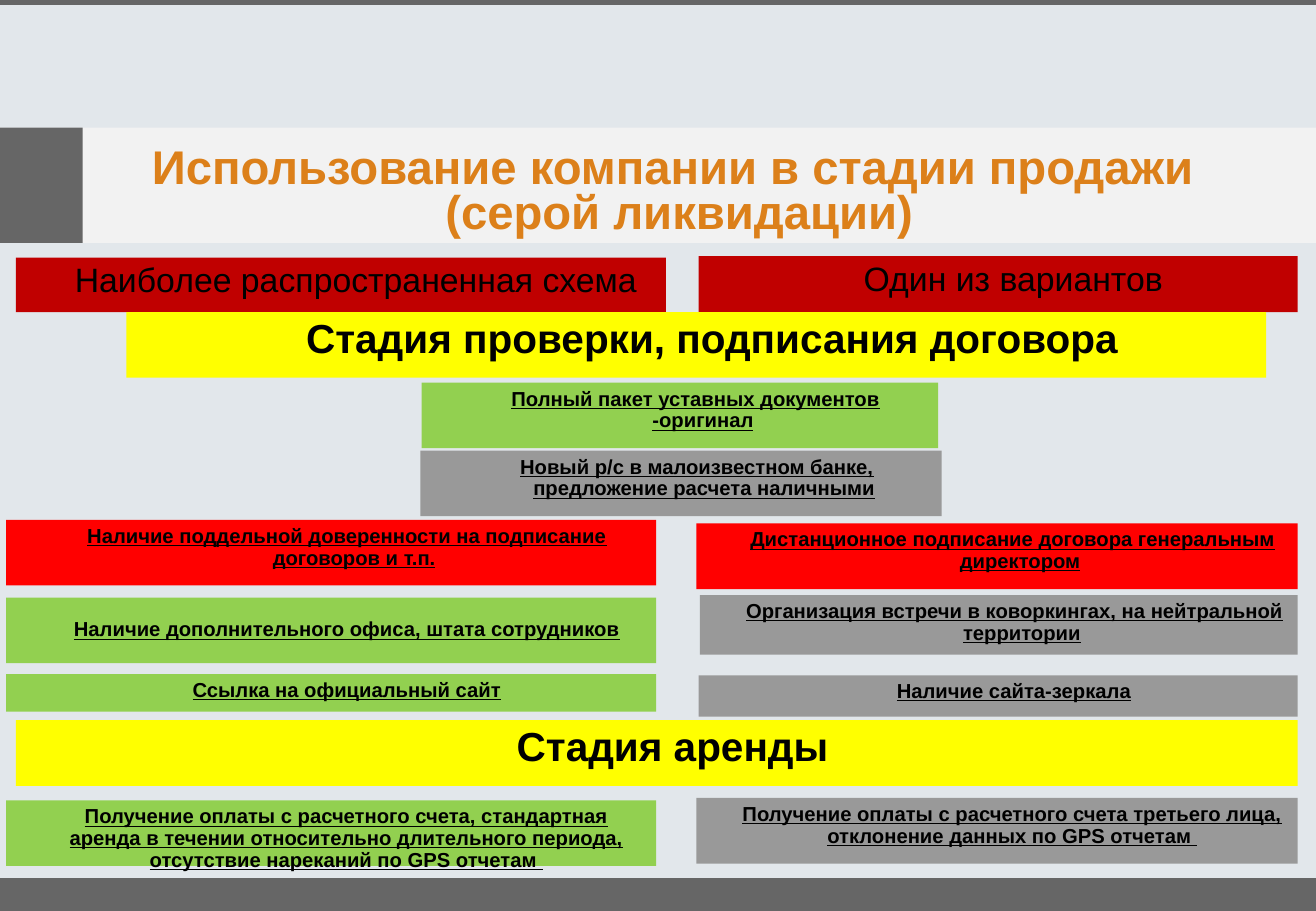
from copy import deepcopy
from dataclasses import dataclass

from pptx import Presentation
from pptx.dml.color import RGBColor
from pptx.enum.shapes import MSO_SHAPE as Preset
from pptx.enum.text import MSO_ANCHOR as Anchor, MSO_AUTO_SIZE as AutoSize, PP_ALIGN as Align
from pptx.oxml.ns import qn
from pptx.slide import Slide
from pptx.text.text import Font
from pptx.util import Inches, Pt

COLORS = {
    "background": "E2E7EB", "frame": "666666", "title band": "F2F2F2", "title": "DC801A",
    "scheme": "C00000", "stage": "FFFF00", "genuine": "92D050", "doubtful": "999999",
    "forged": "FF0000", "text": "000000",
}
SLIDE_WIDTH, SLIDE_HEIGHT = 10.83, 7.5
TEXT_SIZES = {"scheme": 20, "stage": 24}
SIGN_SIZE = 12
LEFT, LEFT_WIDTH = 0.05, 5.35
RIGHT, RIGHT_WIDTH = 5.73, 4.95
ROW = 0.54


@dataclass
class Band:
    """A plain strip of the slide frame."""
    role: str
    left: float
    top: float
    width: float
    height: float


@dataclass
class Card(Band):
    """A coloured strip with a heading or a sign of the scheme."""
    wording: str
    hanging: bool = True
    anchor: Anchor = Anchor.TOP


BANDS = [
    Band("frame", 0, 7.23, SLIDE_WIDTH, 0.27),
    Band("title band", 0, 1.05, SLIDE_WIDTH, 0.95),
    Band("frame", 0, 1.05, 0.68, 0.95),
    Band("frame", 0, 0, SLIDE_WIDTH, 0.04),
]
CARDS = [
    Card("scheme", 0.13, 2.12, LEFT_WIDTH, 0.45, "Наиболее распространенная схема", False),
    Card("scheme", 5.75, 2.11, 4.93, 0.46, "Один из вариантов", False),
    Card("stage", 1.04, 2.57, 9.38, ROW, "Стадия проверки, подписания договора"),
    Card("genuine", 3.47, 3.15, 4.25, ROW, "Полный пакет уставных документов -оригинал"),
    Card("doubtful", 3.46, 3.71, 4.29, ROW,
         "Новый р/с в малоизвестном банке, предложение расчета наличными"),
    Card("forged", LEFT, 4.28, LEFT_WIDTH, ROW,
         "Наличие поддельной доверенности на подписание договоров и т.п."),
    Card("forged", RIGHT, 4.31, RIGHT_WIDTH, ROW,
         "Дистанционное подписание договора генеральным директором"),
    Card("genuine", LEFT, 4.92, LEFT_WIDTH, ROW,
         "Наличие дополнительного офиса, штата сотрудников", anchor=Anchor.MIDDLE),
    Card("doubtful", 5.76, 4.9, 4.92, 0.49,
         "Организация встречи в коворкингах, на нейтральной территории"),
    Card("genuine", LEFT, 5.55, LEFT_WIDTH, 0.31, "Ссылка на официальный сайт"),
    Card("doubtful", 5.75, 5.56, 4.93, 0.34, "Наличие сайта-зеркала"),
    Card("stage", 0.13, 5.93, 10.55, ROW, "Стадия аренды"),
    Card("genuine", LEFT, 6.59, LEFT_WIDTH, ROW,
         "Получение оплаты с расчетного счета, стандартная аренда в течении относительно "
         "длительного периода, отсутствие нареканий по GPS отчетам ", False),
    Card("doubtful", RIGHT, 6.57, RIGHT_WIDTH, ROW,
         "Получение оплаты с расчетного счета третьего лица, отклонение данных по GPS отчетам ",
         False),
]


def color(role: str) -> RGBColor:
    """Return the colour of a role."""
    return RGBColor.from_string(COLORS[role])


def style_font(font: Font, size: int, role: str, bold: bool = True, underline: bool = False) -> None:
    """Format the font of a run."""
    font.name = "Arial"
    font.size = Pt(size)
    font.bold = bold
    font.underline = underline
    font.color.rgb = color(role)


def add_band(slide: Slide, band: Band):
    """Draw a borderless filled strip and return it."""
    strip = slide.shapes.add_shape(Preset.RECTANGLE, Inches(band.left), Inches(band.top),
                                   Inches(band.width), Inches(band.height))
    strip.shadow.inherit = False
    strip.fill.solid()
    strip.fill.fore_color.rgb = color(band.role)
    strip.line.fill.background()
    return strip


def add_card(slide: Slide, card: Card) -> None:
    """Draw a strip with its centred, indented wording."""
    frame = add_band(slide, card).text_frame
    frame.word_wrap = True
    frame.vertical_anchor = card.anchor
    frame.text = card.wording
    paragraph = frame.paragraphs[0]
    paragraph.alignment = Align.CENTER
    paragraph.line_spacing = 0.9
    margin, indent = (0.38, -0.12) if card.hanging else (0.25, 0)
    properties = paragraph._p.get_or_add_pPr()
    properties.set("marL", str(Inches(margin)))
    properties.set("indent", str(Inches(indent)))
    style_font(paragraph.runs[0].font, TEXT_SIZES.get(card.role, SIGN_SIZE), "text",
               bold=card.role != "scheme", underline=card.role not in TEXT_SIZES)


def fill_title(slide: Slide) -> None:
    """Place the title in front of its band and format it."""
    title = slide.shapes.title
    title._element.getparent().append(title._element)
    title.left, title.top, title.width, title.height = map(Inches, (0.63, 0.96, 9.81, 1.26))
    frame = title.text_frame
    frame.text = "Использование компании в стадии продажи\v (серой ликвидации)"
    frame.word_wrap = False
    frame.auto_size = AutoSize.NONE
    frame.vertical_anchor = Anchor.MIDDLE
    paragraph = frame.paragraphs[0]
    paragraph.alignment = Align.CENTER
    paragraph.line_spacing = 0.8
    for run in paragraph.runs:
        style_font(run.font, 28, "title")
    line_break = paragraph._p.find(qn("a:br"))
    line_break.append(deepcopy(paragraph.runs[0]._r.rPr))


def main() -> None:
    """Build and save the slide."""
    deck = Presentation()
    deck.slide_width, deck.slide_height = Inches(SLIDE_WIDTH), Inches(SLIDE_HEIGHT)
    slide = deck.slides.add_slide(deck.slide_layouts.get_by_name("Title Only"))
    slide.background.fill.solid()
    slide.background.fill.fore_color.rgb = color("background")
    for band in BANDS:
        add_band(slide, band)
    fill_title(slide)
    for card in CARDS:
        add_card(slide, card)
    deck.save("out.pptx")


if __name__ == "__main__":
    main()
